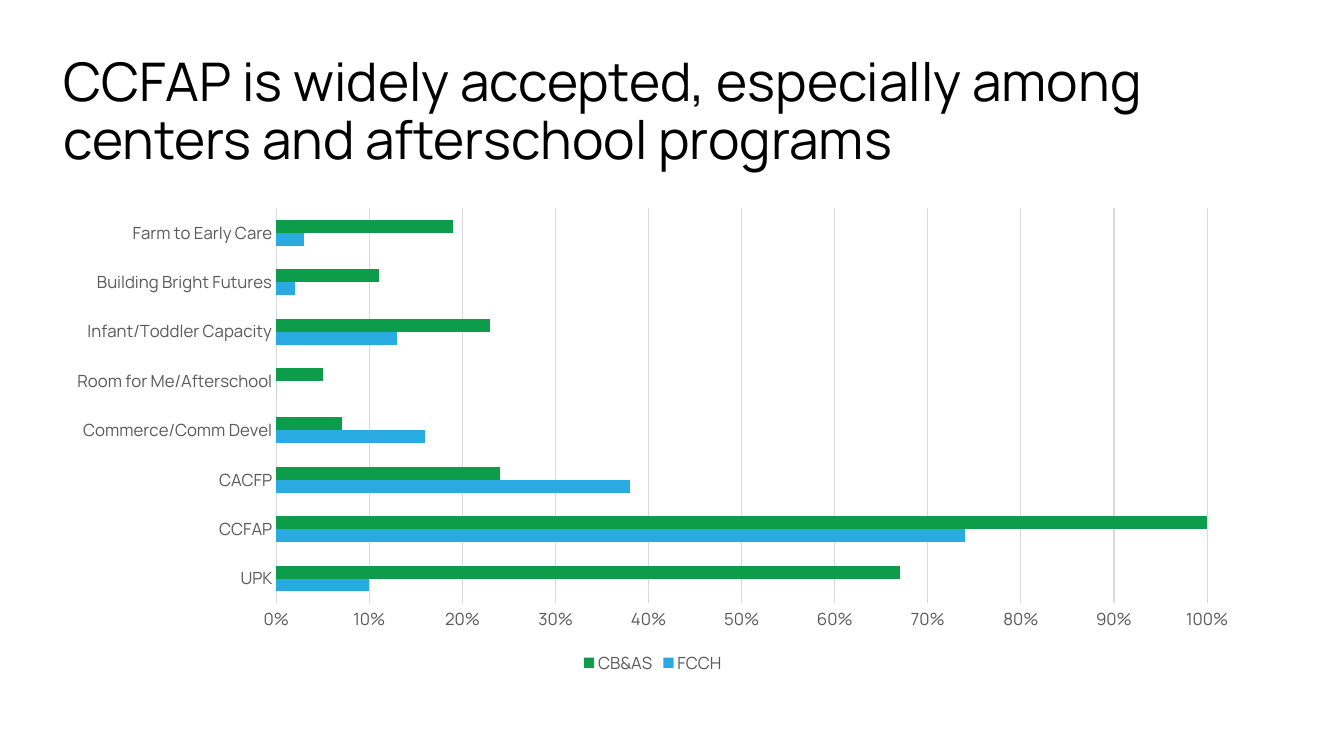
from dataclasses import dataclass

from pptx import Presentation
from pptx.chart.data import CategoryChartData
from pptx.dml.color import RGBColor
from pptx.enum.chart import XL_CHART_TYPE, XL_LEGEND_POSITION, XL_TICK_MARK
from pptx.enum.text import MSO_ANCHOR
from pptx.util import Inches, Pt

BAR_CLUSTERED = XL_CHART_TYPE.BAR_CLUSTERED
LEGEND_BOTTOM = XL_LEGEND_POSITION.BOTTOM
NO_TICK = XL_TICK_MARK.NONE
MIDDLE = MSO_ANCHOR.MIDDLE


@dataclass(frozen=True)
class Theme:
    font: str = "Manrope"
    ink: str = "000000"
    label: str = "595959"
    rule: str = "D9D9D9"
    blue: str = "29ABE2"
    green: str = "0D9C4A"
    title_size: float = 38
    chart_size: float = 10
    label_size: float = 12
    rule_width: float = 0.75


THEME = Theme()
LEFT, WIDTH = 0.53, 11.89

PROGRAMS = ["UPK", "CCFAP", "CACFP", "Commerce/Comm Devel", "Room for Me/Afterschool",
            "Infant/Toddler Capacity", "Building Bright Futures", "Farm to Early Care"]
SERIES = [
    ("FCCH", [0.1, 0.74, 0.38, 0.16, 0, 0.13, 0.02, 0.03], THEME.blue),
    ("CB&AS", [0.67, 1, 0.24, 0.07, 0.05, 0.23, 0.11, 0.19], THEME.green),
]


class SlideBuilder:
    """Holds the theme and the current slide."""

    def __init__(self, slide, theme):
        self.slide = slide
        self.theme = theme

    def style_font(self, font, size, color):
        font.name = self.theme.font
        font.size = Pt(size)
        font.bold = False
        font.color.rgb = RGBColor.from_string(color)

    def style_line(self, line):
        line.color.rgb = RGBColor.from_string(self.theme.rule)
        line.width = Pt(self.theme.rule_width)

    def text(self, text, *, left, top, width, height, size, color, spacing=1.0, anchor=MIDDLE):
        box = self.slide.shapes.add_textbox(Inches(left), Inches(top), Inches(width), Inches(height))
        tf = box.text_frame
        tf.word_wrap = True
        tf.vertical_anchor = anchor
        p = tf.paragraphs[0]
        p.line_spacing = spacing
        r = p.add_run()
        r.text = text
        self.style_font(r.font, size, color)
        return box

    def bar_chart(self, categories, series, *, left, top, width, height, gap):
        t = self.theme
        data = CategoryChartData(number_format="0%")
        data.categories = categories
        for name, values, _ in series:
            data.add_series(name, values)
        chart = self.slide.shapes.add_chart(
            BAR_CLUSTERED, Inches(left), Inches(top), Inches(width), Inches(height), data).chart
        chart.has_title = False
        self.style_font(chart.font, t.chart_size, t.ink)

        # Bars
        plot = chart.plots[0]
        plot.gap_width = gap
        plot.vary_by_categories = False
        for bars, (_, _, color) in zip(plot.series, series):
            bars.format.fill.solid()
            bars.format.fill.fore_color.rgb = RGBColor.from_string(color)

        # Axes
        for axis in (chart.category_axis, chart.value_axis):
            axis.major_tick_mark = axis.minor_tick_mark = NO_TICK
            self.style_font(axis.tick_labels.font, t.label_size, t.label)
        self.style_line(chart.category_axis.format.line)
        axis = chart.value_axis
        axis.minimum_scale, axis.maximum_scale, axis.major_unit = 0, 1, 0.1
        axis.tick_labels.number_format = "0%"
        axis.tick_labels.number_format_is_linked = False
        axis.format.line.fill.background()
        axis.has_major_gridlines = True
        self.style_line(axis.major_gridlines.format.line)

        # Legend
        chart.has_legend = True
        chart.legend.position = LEGEND_BOTTOM
        chart.legend.include_in_layout = False
        self.style_font(chart.legend.font, t.label_size, t.label)
        return chart


def main():
    prs = Presentation()
    prs.slide_width, prs.slide_height = Inches(13.33), Inches(7.5)
    s = SlideBuilder(prs.slides.add_slide(prs.slide_layouts[6]), THEME)

    # Title
    s.text("CCFAP is widely accepted, especially among centers and afterschool programs",
           left=LEFT, top=0.4, width=WIDTH, height=1.45,
           size=THEME.title_size, color=THEME.ink, spacing=0.9)

    # Share of programs using each funding source
    s.bar_chart(PROGRAMS, SERIES, left=LEFT, top=1.97, width=WIDTH, height=4.76, gap=182)

    prs.save("out.pptx")


if __name__ == "__main__":
    main()
